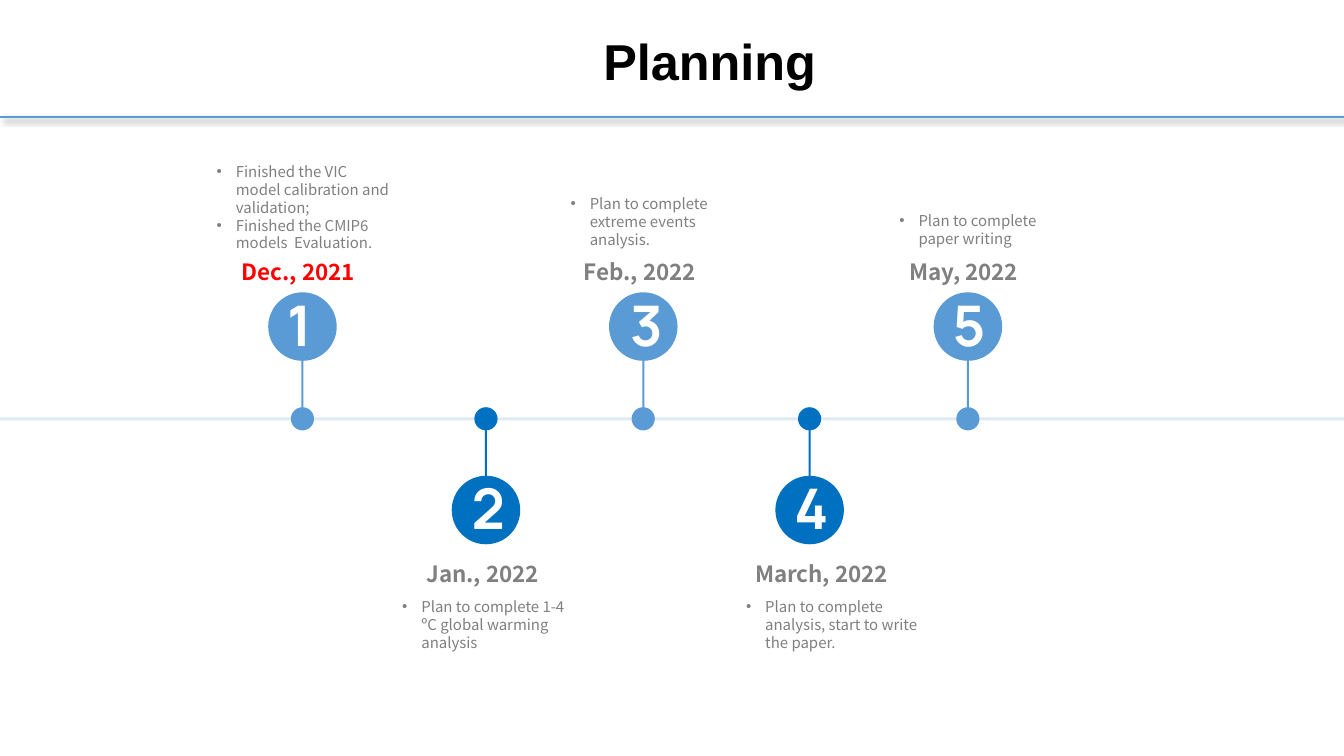
import pptx
import pptx.util
import pptx.dml.color
import pptx.enum.shapes
import pptx.enum.text
import pptx.oxml
import pptx.oxml.ns

Inches = pptx.util.Inches
Kind = pptx.enum.shapes.MSO_SHAPE
SKY, BLUE, GREY = "5B9BD5", "0070C0", "808080"
SANS = "Noto Sans CJK SC"

deck = pptx.Presentation()
deck.slide_width, deck.slide_height = Inches(13.33), Inches(7.5)
slide = deck.slides.add_slide(deck.slide_layouts[6])


def shape(kind, left, top, width, height, color):
    part = slide.shapes.add_shape(
        kind, Inches(left), Inches(top), Inches(width), Inches(height))
    part.shadow.inherit = False
    part.fill.solid()
    part.fill.fore_color.rgb = pptx.dml.color.RGBColor.from_string(color)
    part.line.fill.background()


def label(area, lines, size, font, color, bold=True, wrap=False, pad=(0.13, 0.07)):
    """Add a text box with one paragraph per line and return its frame."""
    frame = slide.shapes.add_textbox(*map(Inches, area)).text_frame
    frame.word_wrap = wrap
    frame.margin_left = frame.margin_right = Inches(pad[0])
    frame.margin_top = frame.margin_bottom = Inches(pad[1])
    for i, line in enumerate(lines):
        para = frame.paragraphs[0] if i == 0 else frame.add_paragraph()
        run = para.add_run()
        run.text = line
        run.font.size = pptx.util.Pt(size)
        run.font.name = font
        run.font.bold = bold
        run.font.color.rgb = pptx.dml.color.RGBColor.from_string(color)
    return frame


# Title and rule
title = label((2.42, 0.16, 9.24, 0.98), ["Planning"], 36, "Arial", "000000",
              wrap=True, pad=(0.1, 0.05))
title.vertical_anchor = pptx.enum.text.MSO_ANCHOR.MIDDLE
title.paragraphs[0].alignment = pptx.enum.text.PP_ALIGN.CENTER
title.paragraphs[0].line_spacing = 0.85

rule = slide.shapes.add_connector(
    pptx.enum.shapes.MSO_CONNECTOR.STRAIGHT,
    Inches(0), Inches(1.16), Inches(13.33), Inches(1.16))
rule.line.color.rgb = pptx.dml.color.RGBColor.from_string(SKY)
rule.line.width = pptx.util.Pt(2)
rule._element.spPr.append(pptx.oxml.parse_xml(
    f'<a:effectLst {pptx.oxml.ns.nsdecls("a")}>'
    '<a:outerShdw blurRad="50800" dist="38100" dir="2700000" algn="tl" rotWithShape="0">'
    '<a:srgbClr val="000000"><a:alpha val="40000"/></a:srgbClr>'
    '</a:outerShdw></a:effectLst>'))

# Timeline
shape(Kind.RECTANGLE, 0, 4.14, 13.33, 0.03, "DEEBF7")

# Middle, digit left, date left and width, date, date colour, note left, top and height, notes
steps = [
    (3.0, 2.75, 2.27, 1.44, "Dec., 2021", "FF0000", 2.02, 1.54, 1.03,
     ["Finished the VIC model calibration and validation;",
      "Finished the CMIP6 models  Evaluation."]),
    (4.82, 4.58, 4.1, 1.4, "Jan., 2022", GREY, 3.86, 5.86, 0.67,
     ["Plan to complete 1-4 ºC global warming analysis"]),
    (6.38, 6.15, 5.66, 1.42, "Feb., 2022", GREY, 5.53, 1.86, 0.67,
     ["Plan to complete extreme events analysis."]),
    (8.03, 7.78, 7.36, 1.67, "March, 2022", GREY, 7.27, 5.86, 0.67,
     ["Plan to complete analysis, start to write the paper."]),
    (9.6, 9.35, 8.89, 1.43, "May, 2022", GREY, 8.79, 2.03, 0.49,
     ["Plan to complete paper writing"]),
]
for num, step in enumerate(steps, 1):
    mid, digit, left, width, date, tint, edge, top, height, notes = step
    above = num % 2 == 1
    color = SKY if above else BLUE
    stem, tall, disc, head = (3.24, 0.91, 2.9, 2.49) if above else (4.26, 0.8, 4.72, 5.49)
    shape(Kind.RECTANGLE, mid - 0.01, stem, 0.02, tall, color)
    shape(Kind.OVAL, mid - 0.115, 4.04, 0.23, 0.23, color)
    shape(Kind.OVAL, mid - 0.34, disc, 0.68, 0.68, color)
    label((digit, disc - 0.07, 0.51, 0.77), [str(num)], 40, "Manrope", "FFFFFF",
          pad=(0.1, 0.05))
    label((left, head, width, 0.4), [date], 16, SANS, tint)
    frame = label((edge, top, 1.97, height), notes, 10.7, SANS, GREY,
                  bold=False, wrap=True)
    for para in frame.paragraphs:
        props = para._p.get_or_add_pPr()
        props.set("marL", str(Inches(0.19)))
        props.set("indent", str(Inches(-0.19)))
        props.append(pptx.oxml.parse_xml(
            f'<a:buFont {pptx.oxml.ns.nsdecls("a")} typeface="Arial"/>'))
        props.append(pptx.oxml.parse_xml(
            f'<a:buChar {pptx.oxml.ns.nsdecls("a")} char="•"/>'))

deck.save("out.pptx")
